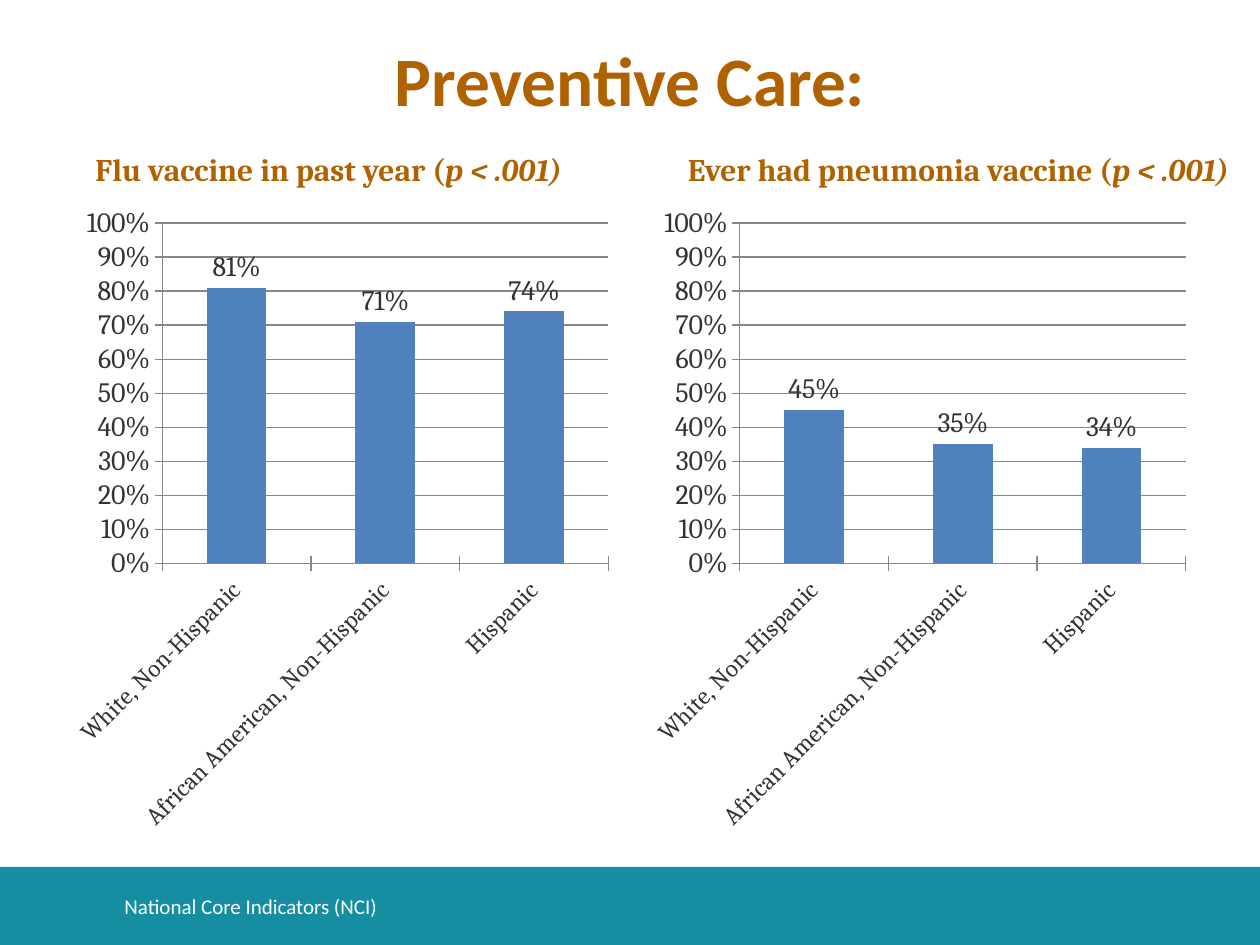
"""Build the preventive care slide with two vaccine rate charts."""
from dataclasses import dataclass

from pptx import Presentation
from pptx.chart.axis import _BaseAxis
from pptx.chart.data import CategoryChartData
from pptx.dml.color import RGBColor
from pptx.enum.chart import XL_CHART_TYPE, XL_LABEL_POSITION, XL_TICK_MARK
from pptx.enum.shapes import MSO_SHAPE
from pptx.enum.text import MSO_ANCHOR, PP_ALIGN
from pptx.slide import Slide
from pptx.text.text import Font, TextFrame
from pptx.util import Pt

COLUMN_CLUSTERED = XL_CHART_TYPE.COLUMN_CLUSTERED
OUTSIDE_END = XL_LABEL_POSITION.OUTSIDE_END
CROSS = XL_TICK_MARK.CROSS
RECTANGLE = MSO_SHAPE.RECTANGLE
MIDDLE, BOTTOM = MSO_ANCHOR.MIDDLE, MSO_ANCHOR.BOTTOM
LEFT, CENTER = PP_ALIGN.LEFT, PP_ALIGN.CENTER

COLORS = {
    "heading": "B06100",
    "footer": "168EA2",
    "white": "FFFFFF",
    "bar": "4F81BD",
    "chart_text": "333333",
    "line": "878787",
}
HEADING_FONT, BODY_FONT = "Cambria", "Calibri"
CATEGORIES = ("White, Non-Hispanic", "African American, Non-Hispanic", "Hispanic")
SLIDE_WIDTH, SLIDE_HEIGHT = 720, 540
FOOTER_TOP = 495.4
CHART_TOP, CHART_WIDTH, CHART_HEIGHT = 111, 318, 371.5
HEADING_HEIGHT = 39


@dataclass
class VaccinePanel:
    heading: str
    heading_left: float
    heading_width: float
    chart_left: float
    rates: tuple[float, ...]


PANELS = (
    VaccinePanel("Flu vaccine in past year (", 47.5, 318, 36, (0.81, 0.71, 0.74)),
    VaccinePanel("Ever had pneumonia vaccine (", 386, 334, 366, (0.45, 0.35, 0.34)),
)


def color(name: str) -> RGBColor:
    return RGBColor.from_string(COLORS[name])


def format_font(font: Font, size: float, name: str, color_name: str) -> None:
    font.size = Pt(size)
    font.name = name
    font.color.rgb = color(color_name)


def write_text(frame: TextFrame, *runs: str, size: float, font_name: str, color_name: str,
               bold: bool = False, italic_from: int = 99, align: PP_ALIGN = LEFT,
               anchor: MSO_ANCHOR = MIDDLE) -> None:
    frame.word_wrap = True
    frame.vertical_anchor = anchor
    paragraph = frame.paragraphs[0]
    paragraph.alignment = align
    for index, text in enumerate(runs):
        run = paragraph.add_run()
        run.text = text
        format_font(run.font, size, font_name, color_name)
        run.font.bold = bold
        run.font.italic = index >= italic_from


def format_axis(axis: _BaseAxis, size: float) -> None:
    axis.major_tick_mark = CROSS
    axis.format.line.color.rgb = color("line")
    format_font(axis.tick_labels.font, size, HEADING_FONT, "chart_text")


def add_rate_chart(slide: Slide, panel: VaccinePanel) -> None:
    chart_data = CategoryChartData(number_format="0%")
    chart_data.categories = CATEGORIES
    chart_data.add_series("Series 1", panel.rates)
    chart = slide.shapes.add_chart(COLUMN_CLUSTERED, Pt(panel.chart_left), Pt(CHART_TOP),
                                   Pt(CHART_WIDTH), Pt(CHART_HEIGHT), chart_data).chart
    chart.has_legend = False
    chart.has_title = False
    format_font(chart.font, 10, HEADING_FONT, "chart_text")

    category_axis, value_axis = chart.category_axis, chart.value_axis
    format_axis(category_axis, 14)
    category_axis._element.txPr.bodyPr.set("rot", "-2700000")
    format_axis(value_axis, 16)
    value_axis.minimum_scale, value_axis.maximum_scale = 0, 1
    value_axis.major_unit = 0.1
    value_axis.tick_labels.number_format = "0%"
    value_axis.tick_labels.number_format_is_linked = False
    value_axis.has_major_gridlines = True
    value_axis.major_gridlines.format.line.color.rgb = color("line")

    plot = chart.plots[0]
    plot.gap_width = 150
    plot.vary_by_categories = False
    series = plot.series[0]
    series.format.fill.solid()
    series.format.fill.fore_color.rgb = color("bar")
    labels = series.data_labels
    labels.show_value = True
    labels.number_format = "0%"
    labels.number_format_is_linked = False
    labels.position = OUTSIDE_END
    format_font(labels.font, 16, HEADING_FONT, "chart_text")


def add_panel(slide: Slide, panel: VaccinePanel) -> None:
    heading = slide.shapes.add_textbox(Pt(panel.heading_left), Pt(CHART_TOP - HEADING_HEIGHT),
                                       Pt(panel.heading_width), Pt(HEADING_HEIGHT))
    write_text(heading.text_frame, panel.heading, "p < .001)", size=18, font_name=HEADING_FONT,
               color_name="heading", bold=True, italic_from=1, anchor=BOTTOM)
    add_rate_chart(slide, panel)


def add_footer(slide: Slide) -> None:
    band = slide.shapes.add_shape(RECTANGLE, Pt(0), Pt(FOOTER_TOP), Pt(SLIDE_WIDTH),
                                  Pt(SLIDE_HEIGHT - FOOTER_TOP))
    band.shadow.inherit = False
    band.fill.solid()
    band.fill.fore_color.rgb = color("footer")
    band.line.fill.background()
    label = slide.shapes.add_textbox(Pt(64), Pt(503.5), Pt(533), Pt(28.8))
    write_text(label.text_frame, "National Core Indicators (NCI)", size=12,
               font_name=BODY_FONT, color_name="white")


def main() -> None:
    presentation = Presentation()
    presentation.slide_width, presentation.slide_height = Pt(SLIDE_WIDTH), Pt(SLIDE_HEIGHT)
    slide = presentation.slides.add_slide(presentation.slide_layouts[5])
    title = slide.shapes.title
    title.left, title.top, title.width, title.height = Pt(36), Pt(17.5), Pt(648), Pt(55.5)
    write_text(title.text_frame, "Preventive Care:", size=39.6, font_name=BODY_FONT,
               color_name="heading", bold=True, align=CENTER)
    add_footer(slide)
    for panel in PANELS:
        add_panel(slide, panel)
    presentation.save("out.pptx")


if __name__ == "__main__":
    main()
